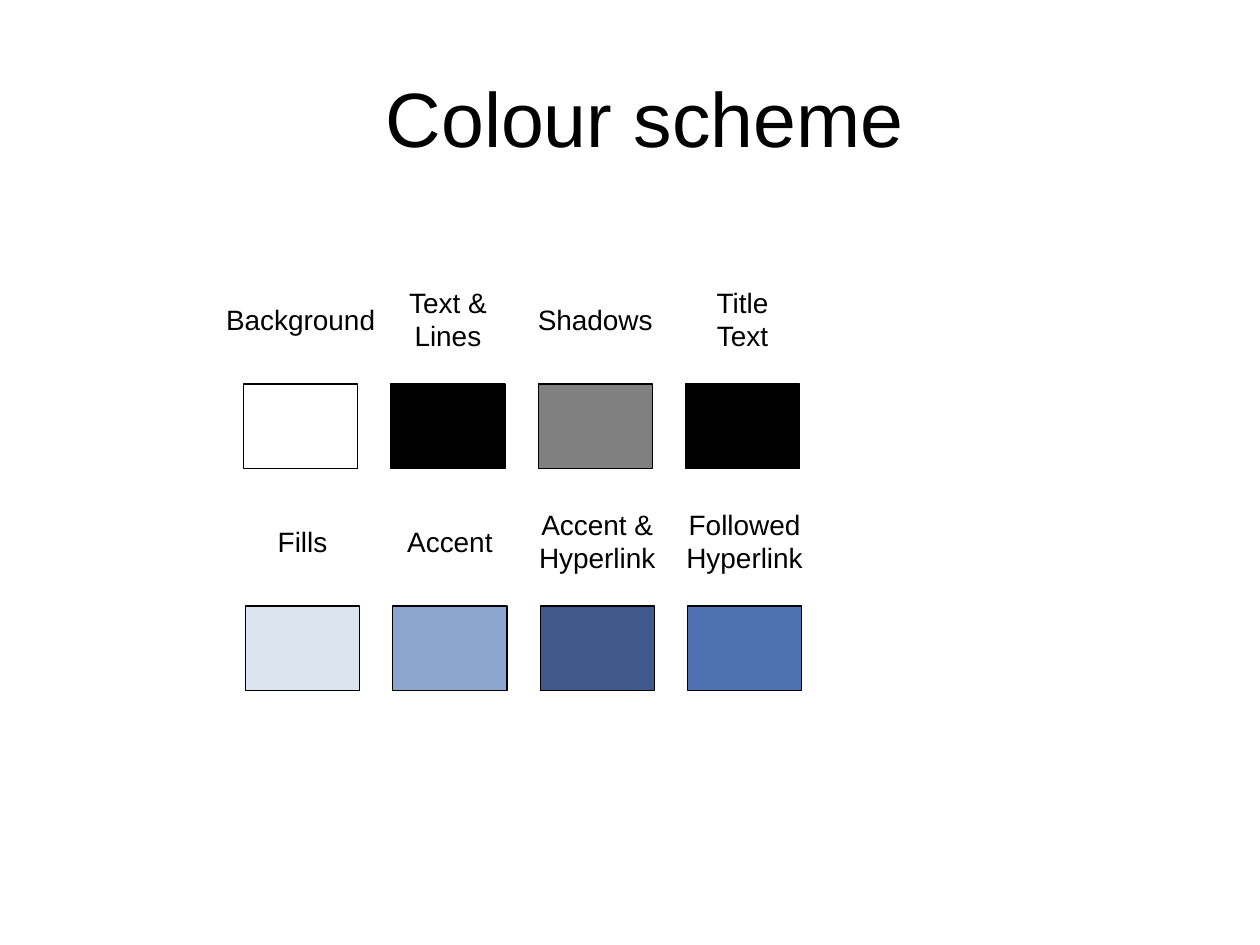
from dataclasses import dataclass

from pptx import Presentation
from pptx.dml.color import RGBColor
from pptx.enum.shapes import MSO_SHAPE as Shape
from pptx.enum.text import MSO_ANCHOR as Anchor, MSO_AUTO_SIZE as Fit, PP_ALIGN as Align
from pptx.slide import Slide
from pptx.util import Cm, Pt

BLACK = RGBColor(0x00, 0x00, 0x00)
WHITE = RGBColor(0xFF, 0xFF, 0xFF)
GREY = RGBColor(0x80, 0x80, 0x80)
PALE = RGBColor(0xDC, 0xE4, 0xF0)
LIGHT = RGBColor(0x8B, 0xA5, 0xCE)
NAVY = RGBColor(0x3F, 0x59, 0x8D)
BLUE = RGBColor(0x4F, 0x70, 0xB1)

FONT = "Arial"
WIDTH, HEIGHT, PITCH = 2.3, 1.7, 2.97
RISE = 1.3


@dataclass(frozen=True)
class Swatch:
    label: str
    fill: RGBColor
    span: float


@dataclass(frozen=True)
class Row:
    left: float
    top: float
    items: tuple[Swatch, ...]


ROWS = (
    Row(4.91, 7.74, (
        Swatch("Background", WHITE, 3.55),
        Swatch("Text &\nLines", BLACK, 2.15),
        Swatch("Shadows", GREY, 2.85),
        Swatch("Title\vText", BLACK, 1.62),
    )),
    Row(4.95, 12.22, (
        Swatch("Fills", PALE, 1.54),
        Swatch("Accent", LIGHT, 2.28),
        Swatch("Accent &\nHyperlink", NAVY, 2.9),
        Swatch("Followed\nHyperlink", BLUE, 2.9),
    )),
)


def add_text(slide: Slide, text: str, *, left: float, top: float, width: float,
             height: float, size: int, wrap: bool = False) -> None:
    box = slide.shapes.add_textbox(Cm(left), Cm(top), Cm(width), Cm(height))
    frame = box.text_frame
    frame.text = text
    frame.word_wrap = wrap
    frame.auto_size = Fit.NONE if wrap else Fit.SHAPE_TO_FIT_TEXT
    frame.vertical_anchor = Anchor.MIDDLE if wrap else Anchor.TOP
    for para in frame.paragraphs:
        para.alignment = Align.CENTER
        para.font.name = FONT
        para.font.size = Pt(size)
        para.font.color.rgb = BLACK


def add_swatch(slide: Slide, item: Swatch, left: float, top: float) -> None:
    rect = slide.shapes.add_shape(Shape.RECTANGLE, Cm(left), Cm(top), Cm(WIDTH), Cm(HEIGHT))
    rect.shadow.inherit = False
    rect.fill.solid()
    rect.fill.fore_color.rgb = item.fill
    rect.line.color.rgb = BLACK
    rect.line.width = Pt(0.75)
    tall = 0.94 if len(item.label.splitlines()) == 1 else 1.63
    add_text(slide, item.label, left=left + (WIDTH - item.span) / 2,
             top=top - RISE - tall / 2, width=item.span, height=tall, size=16)


def main() -> None:
    """Build the colour scheme slide."""
    deck = Presentation()
    deck.slide_width, deck.slide_height = Cm(25.4), Cm(19.05)
    slide = deck.slides.add_slide(deck.slide_layouts[6])
    add_text(slide, "Colour scheme", left=2.7, top=0.76, width=20.6,
             height=3.18, size=44, wrap=True)
    for row in ROWS:
        for col, item in enumerate(row.items):
            add_swatch(slide, item, row.left + col * PITCH, row.top)
    deck.save("out.pptx")


if __name__ == "__main__":
    main()
